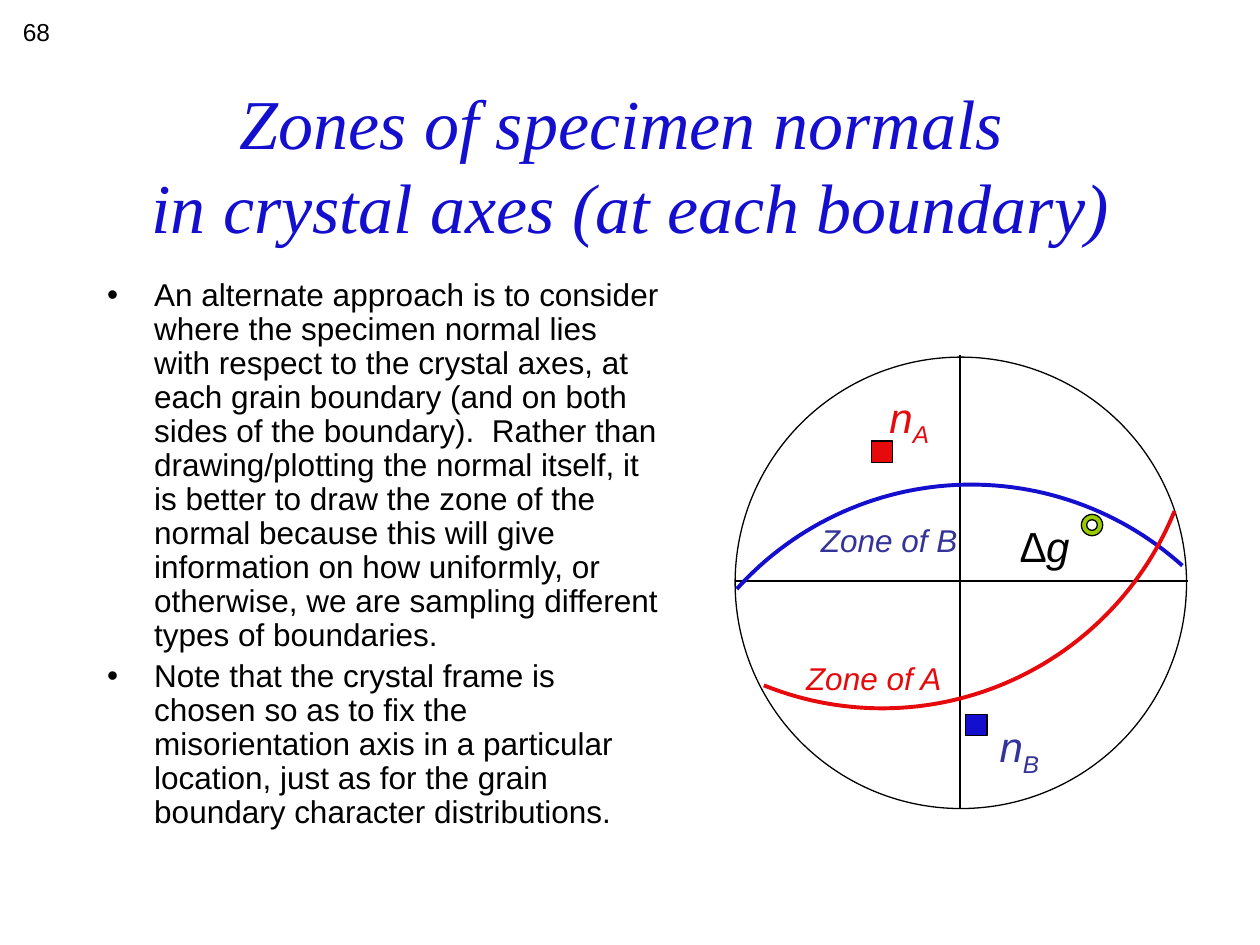
from math import cos, radians, sin
from lxml.etree import SubElement
from pptx import Presentation
from pptx.dml.color import RGBColor
from pptx.enum.shapes import MSO_CONNECTOR, MSO_SHAPE
from pptx.enum.text import MSO_ANCHOR, MSO_AUTO_SIZE, PP_ALIGN
from pptx.oxml.ns import qn
from pptx.util import Cm, Pt

THEME = {
    "black": "000000", "blue": "140ECF", "red": "E60A0C", "indigo": "333399", "lime": "99CC00",
    "thin": 0.75, "thick": 2.25,
    "title": {"name": "Times New Roman", "size": Pt(40), "italic": True},
    "body": {"name": "Arial", "size": Pt(18)},
    "symbol": {"name": "Arial", "size": Pt(24), "italic": True},
    "zone": {"name": "Arial", "size": Pt(18), "italic": True},
    "number": {"name": "Arial", "size": Pt(14)},
}
TITLE = "Zones of specimen normals \vin crystal axes (at each boundary)"
BULLETS = [
    "An alternate approach is to consider where the specimen normal lies with respect to the "
    "crystal axes, at each grain boundary (and on both sides of the boundary).  Rather than "
    "drawing/plotting the normal itself, it is better to draw the zone of the normal because "
    "this will give information on how uniformly, or otherwise, we are sampling different "
    "types of boundaries.",
    "Note that the crystal frame is chosen so as to fix the misorientation axis in a "
    "particular location, just as for the grain boundary character distributions.",
]
LABELS = [
    ("∆g", "", (20.32, 10.37, 1.5, 1.27), "symbol", "black"),
    ("n", "A", (17.68, 7.76, 1.35, 1.27), "symbol", "red"),
    ("n", "B", (19.9, 14.4, 1.35, 1.27), "symbol", "indigo"),
    ("Zone of A", "", (16, 13.16, 3.4, 1.02), "zone", "red"),
    ("Zone of B", "", (16.3, 10.37, 3.4, 1.02), "zone", "indigo"),
]
CIRCLE = (14.82, 7.2, 9.1, 9.1)
AXES = [(14.82, 11.71, 23.95, 11.71), (19.35, 7.16, 19.35, 16.3)]
MARK = 0.43
MARKERS = [
    (MSO_SHAPE.DONUT, 21.8, 10.37, "lime"),
    (MSO_SHAPE.RECTANGLE, 17.57, 8.89, "red"),
    (MSO_SHAPE.RECTANGLE, 19.47, 14.4, "blue"),
]
RADIUS, SWEEP, STEPS = 6.36, 90, 60
ZONES = [(19.58, 16.13, 222, "blue"), (17.78, 7.92, 22, "red")]


def rgb(key):
    """Return a theme colour."""
    return RGBColor.from_string(THEME[key])


def add_run(p, text, style, color):
    """Append a styled run to a paragraph."""
    r = p.add_run()
    r.text = text
    for name, value in THEME[style].items():
        setattr(r.font, name, value)
    r.font.color.rgb = rgb(color)
    return r


def add_box(s, box, wrap=True):
    """Add an empty text box and return its frame."""
    tf = s.shapes.add_textbox(*map(Cm, box)).text_frame
    tf.word_wrap = wrap
    return tf


def outline(sp, color, width, fill=None):
    """Set the line and the fill of a shape."""
    sp.shadow.inherit = False
    sp.line.color.rgb = rgb(color)
    sp.line.width = Pt(width)
    if fill:
        sp.fill.solid()
        sp.fill.fore_color.rgb = rgb(fill)
    else:
        sp.fill.background()


def add_title(s):
    """Add the two-line title."""
    tf = add_box(s, (1.9, 1.7, 21.6, 3.18))
    tf.vertical_anchor = MSO_ANCHOR.MIDDLE
    p = tf.paragraphs[0]
    p.alignment = PP_ALIGN.CENTER
    for i, line in enumerate(TITLE.split("\v")):
        if i:
            p.add_line_break()
        add_run(p, line, "title", "blue")


def add_bullets(s):
    """Add the bulleted explanation."""
    tf = add_box(s, (1.91, 5.5, 11.64, 12.07))
    for i, text in enumerate(BULLETS):
        p = tf.add_paragraph() if i else tf.paragraphs[0]
        p.line_spacing = 0.9
        p.space_before = Pt(4 if i else 0)
        pPr = p._p.get_or_add_pPr()
        pPr.set("marL", str(Cm(0.95)))
        pPr.set("indent", str(-Cm(0.95)))
        SubElement(pPr, qn("a:buFont"), typeface="Arial")
        SubElement(pPr, qn("a:buChar"), char="•")
        add_run(p, text, "body", "black")


def add_projection(s):
    """Add the projection circle with its two axes."""
    grp = s.shapes.add_group_shape()
    outline(grp.shapes.add_shape(MSO_SHAPE.OVAL, *map(Cm, CIRCLE)), "black", THEME["thin"])
    for ends in AXES:
        cx = grp.shapes.add_connector(MSO_CONNECTOR.STRAIGHT, *map(Cm, ends))
        cx.line.color.rgb = rgb("black")
        cx.line.width = Pt(THEME["thin"])
        SubElement(cx._element.spPr, qn("a:effectLst"))


def add_markers(s):
    """Add the misorientation ring and the normal squares."""
    for kind, x, y, fill in MARKERS:
        sp = s.shapes.add_shape(kind, Cm(x), Cm(y), Cm(MARK), Cm(MARK))
        outline(sp, "black", THEME["thin"], fill)


def add_zones(s):
    """Add each zone as an open quarter arc."""
    for x, y, start, color in ZONES:
        angles = [radians(start + SWEEP * i / STEPS) for i in range(STEPS + 1)]
        pts = [(Cm(x + RADIUS * cos(a)), Cm(y + RADIUS * sin(a))) for a in angles]
        fb = s.shapes.build_freeform(*pts[0])
        fb.add_line_segments(pts[1:], close=False)
        outline(fb.convert_to_shape(), color, THEME["thick"])


def add_labels(s):
    """Add the diagram labels with their subscripts."""
    for text, sub, box, style, color in LABELS:
        tf = add_box(s, box, wrap=False)
        tf.auto_size = MSO_AUTO_SIZE.SHAPE_TO_FIT_TEXT
        p = tf.paragraphs[0]
        add_run(p, text, style, color)
        if sub:
            r = add_run(p, sub, style, color)
            r._r.get_or_add_rPr().set("baseline", "-25000")


def main():
    """Build the slide and save it."""
    prs = Presentation()
    prs.slide_width, prs.slide_height = Cm(25.4), Cm(19.05)
    s = prs.slides.add_slide(prs.slide_layouts[6])
    for build in (add_title, add_bullets, add_projection, add_markers, add_zones, add_labels):
        build(s)
    tf = add_box(s, (0.21, 0.21, 5.3, 1.27))
    add_run(tf.paragraphs[0], "68", "number", "black")
    prs.save("out.pptx")


if __name__ == "__main__":
    main()
